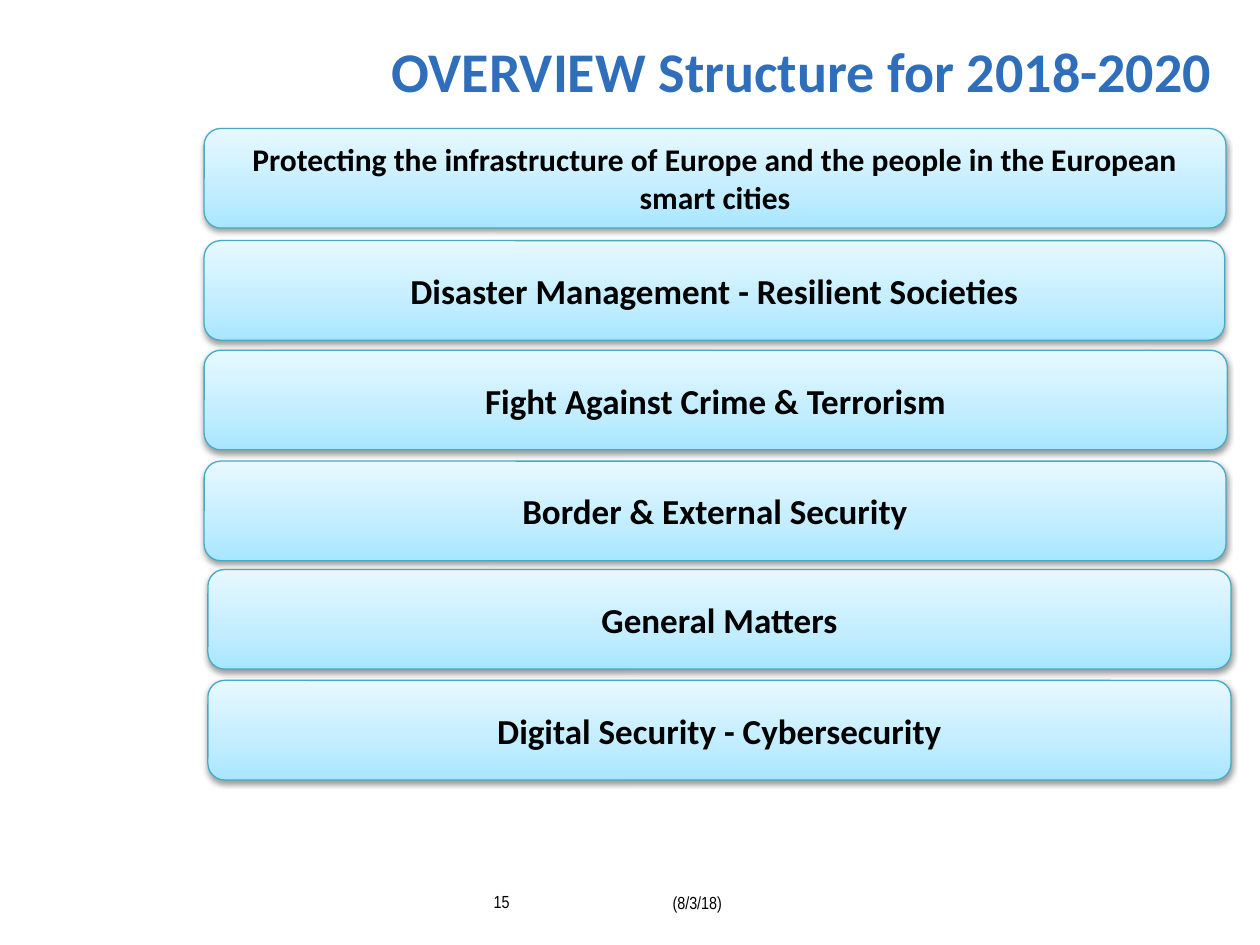
from copy import deepcopy

from pptx import Presentation
from pptx.dml.color import RGBColor
from pptx.enum.shapes import MSO_SHAPE
from pptx.enum.text import MSO_ANCHOR, MSO_AUTO_SIZE, PP_ALIGN
from pptx.oxml import parse_xml
from pptx.oxml.ns import qn
from pptx.util import Inches, Pt

ROUNDED = MSO_SHAPE.ROUNDED_RECTANGLE
MIDDLE, TOP = MSO_ANCHOR.MIDDLE, MSO_ANCHOR.TOP
LEFT, CENTER, RIGHT = PP_ALIGN.LEFT, PP_ALIGN.CENTER, PP_ALIGN.RIGHT
FIT_SHAPE = MSO_AUTO_SIZE.SHAPE_TO_FIT_TEXT
SHADOW = (
    '<a:outerShdw xmlns:a="http://schemas.openxmlformats.org/drawingml/2006/main" '
    'blurRad="40000" dist="20000" dir="5400000" rotWithShape="0">'
    '<a:srgbClr val="000000"><a:alpha val="38000"/></a:srgbClr></a:outerShdw>'
)
BAR_HEIGHT = 0.79
BARS = [
    ("Protecting the infrastructure of Europe and the people in the European smart cities",
     1.62, 1.02, 8.11, 18),
    ("Disaster Management - Resilient Societies", 1.62, 1.91, 8.1, 20),
    ("Fight Against Crime & Terrorism", 1.62, 2.78, 8.12, 20),
    ("Border & External Security", 1.62, 3.66, 8.11, 20),
    ("General Matters", 1.65, 4.52, 8.12, 20),
    ("Digital Security - Cybersecurity", 1.65, 5.4, 8.12, 20),
]


def color(value):
    return RGBColor.from_string(value)


class SlideBuilder:
    """Holds the slide style and draws each kind of element."""

    font = "Calibri"
    footer_font = "Arial Narrow"
    text_color = "000000"
    title_color = "2F6EBB"
    line_color = "46AAC5"
    gradient = [(0, "A7E6FF"), (0.35, "C1EDFF"), (1, "E7F8FF")]

    def __init__(self, slide):
        self.slide = slide

    def set_text(self, shape, text, size, font, text_color, bold, align, anchor):
        frame = shape.text_frame
        frame.text = text
        frame.vertical_anchor = anchor
        paragraph = frame.paragraphs[0]
        paragraph.alignment = align
        run_font = paragraph.runs[0].font
        run_font.name, run_font.size, run_font.bold = font, Pt(size), bold
        run_font.color.rgb = color(text_color)

    def text_box(self, left, top, width, height):
        return self.slide.shapes.add_textbox(
            Inches(left), Inches(top), Inches(width), Inches(height))

    def title(self, text):
        shape = self.text_box(1.06, 0.21, 8.66, 0.69)
        shape.text_frame.word_wrap = True
        self.set_text(shape, text, 32, self.font, self.title_color, True, RIGHT, MIDDLE)

    def footer(self, text, left, top, width):
        shape = self.text_box(left, top, width, 0.27)
        shape.text_frame.word_wrap = False
        shape.text_frame.auto_size = FIT_SHAPE
        self.set_text(shape, text, 10, self.footer_font, self.text_color, False, LEFT, TOP)

    def bar(self, text, left, top, width, size):
        shape = self.slide.shapes.add_shape(
            ROUNDED, Inches(left), Inches(top), Inches(width), Inches(BAR_HEIGHT))
        self.fill_gradient(shape)
        shape.line.color.rgb = color(self.line_color)
        shape.line.width = Pt(0.75)
        shape.shadow.inherit = False
        effects = shape._element.spPr.find(qn("a:effectLst"))
        effects.append(parse_xml(SHADOW))
        shape.text_frame.word_wrap = True
        self.set_text(shape, text, size, self.font, self.text_color, True, CENTER, MIDDLE)

    def fill_gradient(self, shape):
        shape.fill.gradient()
        shape.fill.gradient_angle = 90
        stop_list = next(shape._element.spPr.iter(qn("a:gsLst")))
        stop_list.append(deepcopy(stop_list[-1]))
        for stop, (position, value) in zip(shape.fill.gradient_stops, self.gradient):
            stop.position = position
            stop.color.rgb = color(value)


def main():
    presentation = Presentation()
    presentation.slide_width, presentation.slide_height = Inches(10), Inches(7.5)
    builder = SlideBuilder(presentation.slides.add_slide(presentation.slide_layouts[6]))
    builder.footer("15", 3.82, 7.02, 0.4)
    builder.footer("(8/3/18)", 5.24, 7.03, 0.84)
    builder.title("OVERVIEW Structure for 2018-2020")
    for bar in BARS:
        builder.bar(*bar)
    presentation.save("out.pptx")


if __name__ == "__main__":
    main()
